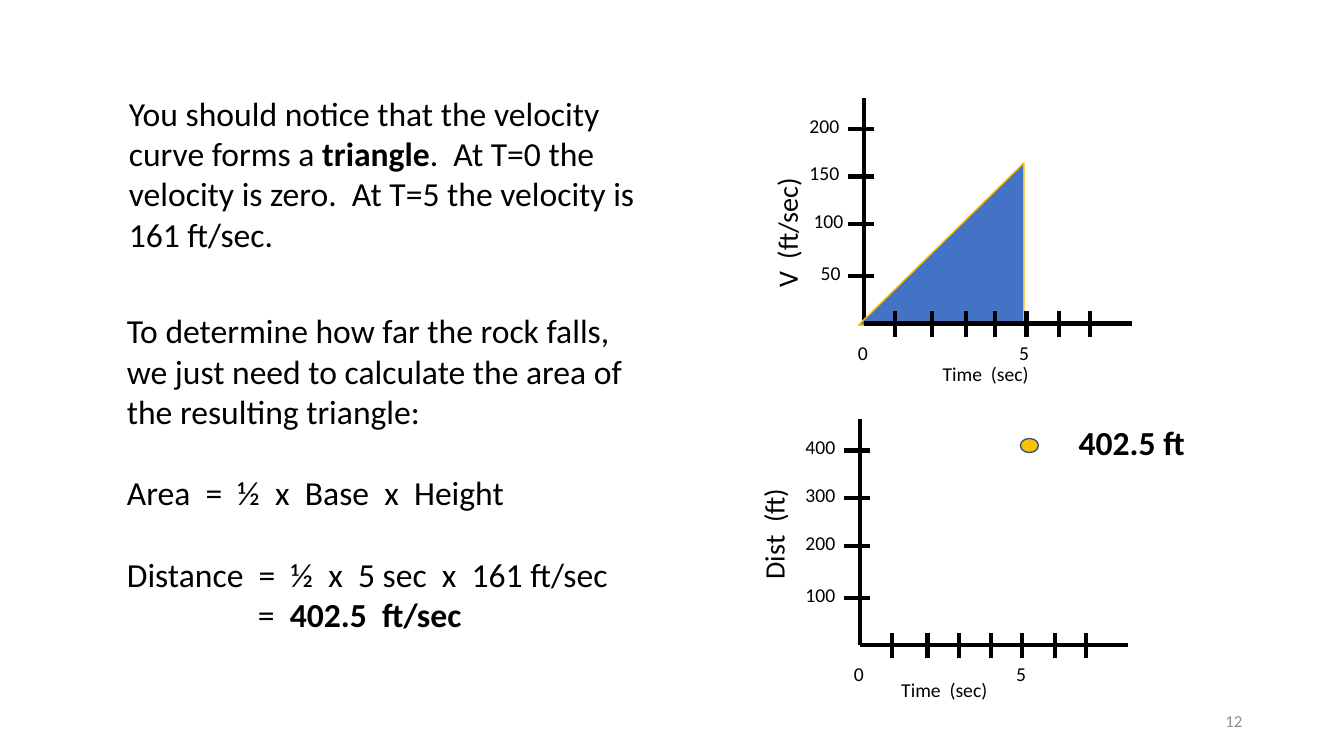
from dataclasses import dataclass

from lxml import etree
from pptx import Presentation
from pptx.dml.color import RGBColor
from pptx.enum.shapes import MSO_CONNECTOR, MSO_SHAPE
from pptx.enum.text import MSO_ANCHOR, PP_ALIGN
from pptx.oxml.ns import qn
from pptx.util import Inches, Pt

STRAIGHT = MSO_CONNECTOR.STRAIGHT
TRIANGLE, OVAL = MSO_SHAPE.RIGHT_TRIANGLE, MSO_SHAPE.OVAL
TOP, MIDDLE = MSO_ANCHOR.TOP, MSO_ANCHOR.MIDDLE
LEFT, RIGHT = PP_ALIGN.LEFT, PP_ALIGN.RIGHT

BLACK = RGBColor(0x00, 0x00, 0x00)
GREY = RGBColor(0x8C, 0x8C, 0x8C)
BLUE = RGBColor(0x44, 0x72, 0xC4)
NAVY = RGBColor(0x32, 0x54, 0x91)
GOLD = RGBColor(0xFF, 0xC0, 0x00)

FONT = "Calibri"
COLUMNS, ROWS = 133.3, 75
CELL = Inches(0.1)
BODY_SIZE = 24
BODY_LINE = Pt(29.3)


@dataclass(frozen=True)
class Box:
    column: float
    row: float
    columns: float
    rows: float

    def emu(self) -> list[int]:
        return [cells(n) for n in (self.column, self.row, self.columns, self.rows)]


@dataclass(frozen=True)
class Run:
    text: str
    bold: bool = False


@dataclass(frozen=True)
class Paragraph:
    runs: tuple[Run, ...]
    gap: bool = False
    indent: float = 0


@dataclass(frozen=True)
class Tick:
    offset: float
    label: str
    label_shift: float


@dataclass(frozen=True)
class Graph:
    origin: float
    baseline: float
    value_ticks: tuple[Tick, ...]
    second_offsets: tuple[float, ...]
    five_shift: float
    value_title: str
    value_title_box: Box
    time_title_box: Box


VELOCITY = Graph(
    85.7, 32.1,
    (Tick(4.7, "50", -5.3), Tick(9.9, "100", -6), Tick(14.6, "150", -6.4), Tick(19.3, "200", -6.4)),
    (3.1, 6.7, 10.1, 13, 16.1, 19.3, 22.4), 14.4,
    "V  (ft/sec)", Box(70.6, 19.9, 14.9, 4.4), Box(92.5, 35.4, 13.5, 3.4),
)
DISTANCE = Graph(
    85.3, 64,
    (Tick(4.7, "100", -6.4), Tick(9.8, "200", -6.4), Tick(14.6, "300", -6.4), Tick(19.3, "400", -6.4)),
    (3.2, 6.7, 9.8, 13, 16.1, 19.3, 22.4), 14.5,
    "Dist  (ft)", Box(69.9, 49.4, 13.7, 4.4), Box(88.4, 66.8, 13.5, 3.4),
)
FALLEN_AREA = Box(85.3, 16, 16.1, 16.4)
FALLEN_POINT = Box(101.2, 43.5, 1.8, 1.4)

OBSERVATION = (
    Paragraph((
        Run("You should notice that the velocity curve forms a "),
        Run("triangle", True),
        Run(".  At T=0 the velocity is zero.  At T=5 the velocity is 161 ft/sec."),
    )),
)
CALCULATION = (
    Paragraph((Run("To determine how far the rock falls, we just need to calculate "
                   "the area of the resulting triangle:"),)),
    Paragraph((Run("Area  =  ½  x  Base  x  Height"),), gap=True),
    Paragraph((Run("Distance  =  ½  x  5 sec  x  161 ft/sec"),), gap=True),
    Paragraph((Run("=  "), Run("402.5  ft/sec", True)), indent=13),
)


def cells(count: float) -> int:
    return round(count * CELL)


def write(slide, box: Box, paragraphs: tuple[Paragraph, ...], size: int, color=BLACK,
          align=LEFT, anchor=TOP, rotation: float = 0) -> None:
    holder = slide.shapes.add_textbox(*box.emu())
    holder.rotation = rotation
    frame = holder.text_frame
    frame.word_wrap = True
    frame.vertical_anchor = anchor
    for index, content in enumerate(paragraphs):
        paragraph = frame.add_paragraph() if index else frame.paragraphs[0]
        paragraph.alignment = align
        if content.gap:
            paragraph.space_before = BODY_LINE
        if content.indent:
            paragraph._p.get_or_add_pPr().set("marL", str(cells(content.indent)))
        for part in content.runs:
            run = paragraph.add_run()
            run.text = part.text
            run.font.name = FONT
            run.font.size = Pt(size)
            run.font.bold = part.bold
            run.font.color.rgb = color


def label(slide, box: Box, text: str, size: int = 14, bold: bool = False, **style) -> None:
    write(slide, box, (Paragraph((Run(text, bold),)),), size, **style)


def stroke(slide, x1: float, y1: float, x2: float, y2: float) -> None:
    line = slide.shapes.add_connector(STRAIGHT, *(cells(n) for n in (x1, y1, x2, y2)))
    line.line.color.rgb = BLACK
    line.line.width = Pt(3)
    etree.SubElement(line._element.spPr, qn("a:effectLst"))


def mark(slide, kind, box: Box, fill: RGBColor, outline: RGBColor, rotation: float = 0) -> None:
    figure = slide.shapes.add_shape(kind, *box.emu())
    figure.rotation = rotation
    figure.shadow.inherit = False
    figure.fill.solid()
    figure.fill.fore_color.rgb = fill
    figure.line.color.rgb = outline
    figure.line.width = Pt(1)


def draw_value_axis(slide, graph: Graph) -> None:
    x, base = graph.origin, graph.baseline
    stroke(slide, x, base - 22.4, x, base)
    for tick in graph.value_ticks:
        y = base - tick.offset
        stroke(slide, x + 1, y, x - 1.6, y)
        label(slide, Box(x + tick.label_shift, y - 2, 5.5, 3.4), tick.label)
    label(slide, graph.value_title_box, graph.value_title, 20, rotation=270)


def draw_time_axis(slide, graph: Graph) -> None:
    x, base = graph.origin, graph.baseline
    stroke(slide, x + 26.6, base, x, base)
    for offset in graph.second_offsets:
        stroke(slide, x + offset, base + 1.3, x + offset, base - 1.2)
    for shift, second in ((-1.6, "0"), (graph.five_shift, "5")):
        label(slide, Box(x + shift, base + 1.2, 5.5, 3.4), second)
    label(slide, graph.time_title_box, "Time  (sec)")


def main() -> None:
    deck = Presentation()
    deck.slide_width, deck.slide_height = cells(COLUMNS), cells(ROWS)
    slide = deck.slides.add_slide(deck.slide_layouts[6])

    label(slide, Box(94.2, 69.5, 30, 4), "12", 12, color=GREY, align=RIGHT, anchor=MIDDLE)

    draw_value_axis(slide, DISTANCE)
    draw_time_axis(slide, DISTANCE)
    mark(slide, OVAL, FALLEN_POINT, GOLD, NAVY)

    draw_value_axis(slide, VELOCITY)
    mark(slide, TRIANGLE, FALLEN_AREA, BLUE, GOLD, 270)
    draw_time_axis(slide, VELOCITY)

    write(slide, Box(11.8, 8.7, 55, 17.2), OBSERVATION, BODY_SIZE)
    write(slide, Box(11.6, 30.3, 52.1, 33.3), CALCULATION, BODY_SIZE)
    label(slide, Box(106, 41.4, 19.6, 5), "402.5 ft", BODY_SIZE, bold=True)

    deck.save("out.pptx")


if __name__ == "__main__":
    main()
